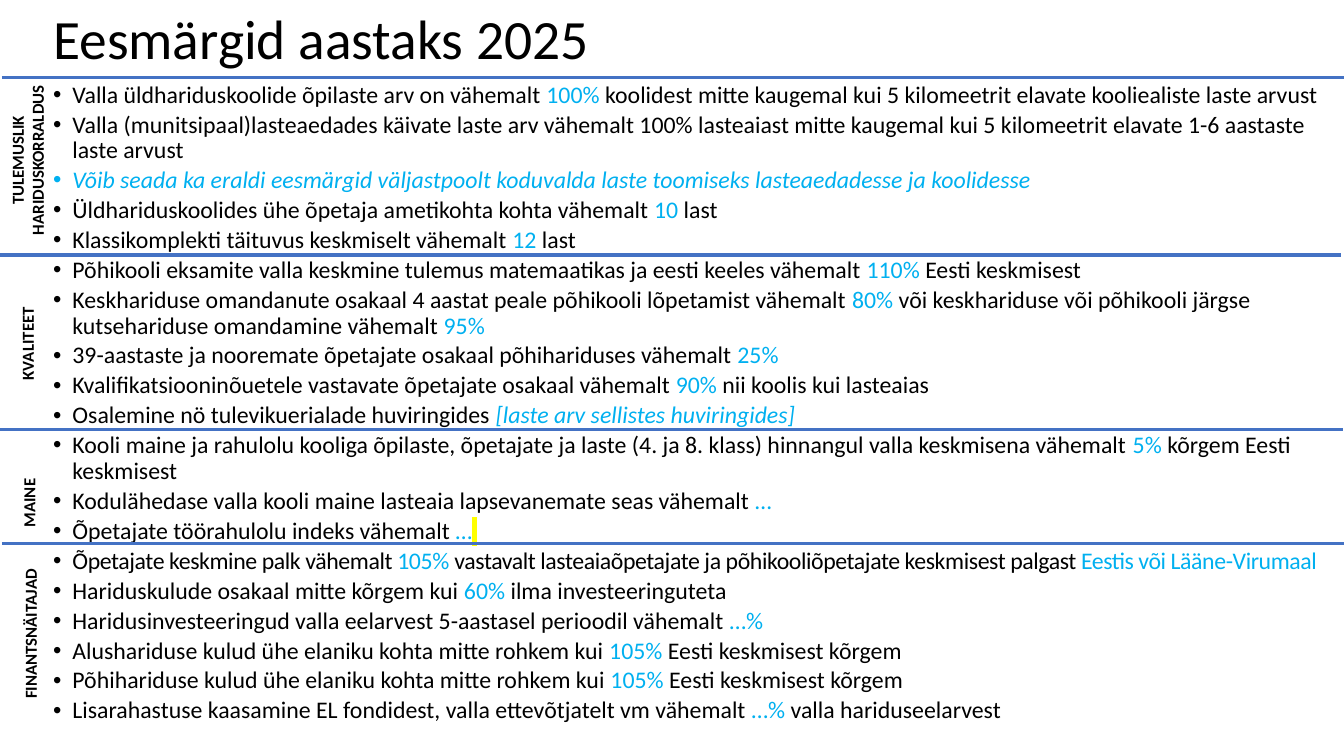
from lxml import etree
from pptx import Presentation
from pptx import util as u
from pptx.dml.color import RGBColor
from pptx.enum import shapes, text
from pptx.oxml import ns

BLACK, BLUE, RULE, YELLOW = "000000", "00B0F0", "4472C4", "FFFF00"

# Black and blue parts alternate at "|"; a leading "/" makes a part italic.
GOALS = [
    "Valla üldhariduskoolide õpilaste arv on vähemalt |100%| koolidest mitte kaugemal kui 5 kilomeetrit elavate kooliealiste laste arvust",
    "Valla (munitsipaal)lasteaedades käivate laste arv vähemalt 100% lasteaiast mitte kaugemal kui 5 kilomeetrit elavate 1-6 aastaste laste arvust",
    "|/Võib seada ka eraldi eesmärgid väljastpoolt koduvalda laste toomiseks lasteaedadesse ja koolidesse",
    "Üldhariduskoolides ühe õpetaja ametikohta kohta vähemalt |10| last",
    "Klassikomplekti täituvus keskmiselt vähemalt |12| last",
    "Põhikooli eksamite valla keskmine tulemus matemaatikas ja eesti keeles vähemalt |110%| Eesti keskmisest",
    "Keskhariduse omandanute osakaal 4 aastat peale põhikooli lõpetamist vähemalt |80% |või keskhariduse või põhikooli järgse kutsehariduse omandamine vähemalt |95%",
    "39-aastaste ja nooremate õpetajate osakaal põhihariduses vähemalt |25%",
    "Kvalifikatsiooninõuetele vastavate õpetajate osakaal vähemalt |90%| nii koolis kui lasteaias",
    "Osalemine nö tulevikuerialade huviringides |/[laste arv sellistes huviringides]",
    "Kooli maine ja rahulolu kooliga õpilaste, õpetajate ja laste (4. ja 8. klass) hinnangul valla keskmisena vähemalt |5% |kõrgem Eesti keskmisest",
    "Kodulähedase valla kooli maine lasteaia lapsevanemate seas vähemalt |…",
    "Õpetajate töörahulolu indeks vähemalt |…| ",
    "Õpetajate keskmine palk vähemalt |105% |vastavalt lasteaiaõpetajate ja põhikooliõpetajate keskmisest palgast |Eestis või Lääne-Virumaal",
    "Hariduskulude osakaal mitte kõrgem kui |60%| ilma investeeringuteta",
    "Haridusinvesteeringud valla eelarvest 5-aastasel perioodil vähemalt |…%",
    "Alushariduse kulud ühe elaniku kohta mitte rohkem kui |105%| Eesti keskmisest kõrgem",
    "Põhihariduse kulud ühe elaniku kohta mitte rohkem kui |105%| Eesti keskmisest kõrgem",
    "Lisarahastuse kaasamine EL fondidest, valla ettevõtjatelt vm vähemalt |…%| valla hariduseelarvest",
]
TIGHT = "Õpetajate keskmine palk"

RULES = [(0.02, 0.77), (0.02, 5.39), (-0.03, 2.53), (-0.01, 4.26)]

LABELS = [
    ("FINANTSNÄITAJAD", (-0.65, 6.14, 1.9, 0.3), 0.1),
    ("MAINE", (-0.33, 4.84, 1.23, 0.3), 0.1),
    ("KVALITEET", (-0.7, 3.26, 1.94, 0.3), 0.1),
    ("TULEMUSLIK HARIDUSKORRALDUS", (-0.57, 1.34, 1.68, 0.5), 0.04),
]


def paint(color, value):
    color.rgb = RGBColor.from_string(value)


def style(para, size, bold=False):
    font = para.font
    font.name, font.size, font.bold = "Calibri", u.Pt(size), bold
    paint(font.color, BLACK)


def add_box(slide, box):
    frame = slide.shapes.add_textbox(*map(u.Inches, box))
    frame.text_frame.word_wrap = True
    return frame


def add_title(slide, words):
    title = slide.shapes.title
    title.left, title.top, title.width, title.height = map(
        u.Inches, (0.43, 0.1, 12.4, 0.62))
    frame = title.text_frame
    frame.auto_size = text.MSO_AUTO_SIZE.NONE
    frame.vertical_anchor = text.MSO_ANCHOR.MIDDLE
    para = frame.paragraphs[0]
    para.text = words
    para.alignment = text.PP_ALIGN.LEFT
    para.line_spacing = 0.9
    style(para, 39.6)


def add_bullet(para):
    props = para._p.get_or_add_pPr()
    props.set("marL", str(u.Inches(0.19)))
    props.set("indent", str(u.Inches(-0.19)))
    font = etree.Element(ns.qn("a:buFont"), typeface="Arial")
    mark = etree.Element(ns.qn("a:buChar"), char="•")
    first = props.find(ns.qn("a:defRPr"))
    first.addprevious(font)
    first.addprevious(mark)


def mark_run(run, value):
    """Highlight the run."""
    light = etree.SubElement(run._r.get_or_add_rPr(), ns.qn("a:highlight"))
    etree.SubElement(light, ns.qn("a:srgbClr"), val=value)


def add_goal(para, goal):
    para.line_spacing = 0.9
    para.space_before = u.Pt(3)
    style(para, 17)
    add_bullet(para)
    for i, part in enumerate(goal.split("|")):
        if not part:
            continue
        run = para.add_run()
        run.text = part.removeprefix("/")
        paint(run.font.color, BLUE if i % 2 else BLACK)
        if part.startswith("/"):
            run.font.italic = True
        if part == " ":
            mark_run(run, YELLOW)
        if goal.startswith(TIGHT):
            run._r.get_or_add_rPr().set("spc", "-30")


def add_goals(slide):
    frame = add_box(slide, (0.43, 0.77, 12.87, 6.73)).text_frame
    for i, goal in enumerate(GOALS):
        add_goal(frame.add_paragraph() if i else frame.paragraphs[0], goal)


def add_rule(slide, left, top):
    line = slide.shapes.add_connector(
        shapes.MSO_CONNECTOR.STRAIGHT,
        *map(u.Inches, (left, top, left + 13.33, top)))
    paint(line.line.color, RULE)
    line.line.width = u.Pt(2.25)
    etree.SubElement(line._element.spPr, ns.qn("a:effectLst"))


def add_label(slide, words, box, inset):
    shape = add_box(slide, box)
    shape.rotation = 270
    frame = shape.text_frame
    frame.auto_size = text.MSO_AUTO_SIZE.SHAPE_TO_FIT_TEXT
    frame.margin_left = frame.margin_right = u.Inches(inset)
    para = frame.paragraphs[0]
    para.text = words
    para.alignment = text.PP_ALIGN.CENTER
    style(para, 12, bold=True)


def main():
    deck = Presentation()
    deck.slide_width, deck.slide_height = u.Inches(13.33), u.Inches(7.5)
    slide = deck.slides.add_slide(deck.slide_layouts[5])
    add_title(slide, "Eesmärgid aastaks 2025")
    add_goals(slide)
    for spot in RULES:
        add_rule(slide, *spot)
    for label in LABELS:
        add_label(slide, *label)
    deck.save("out.pptx")


if __name__ == "__main__":
    main()
